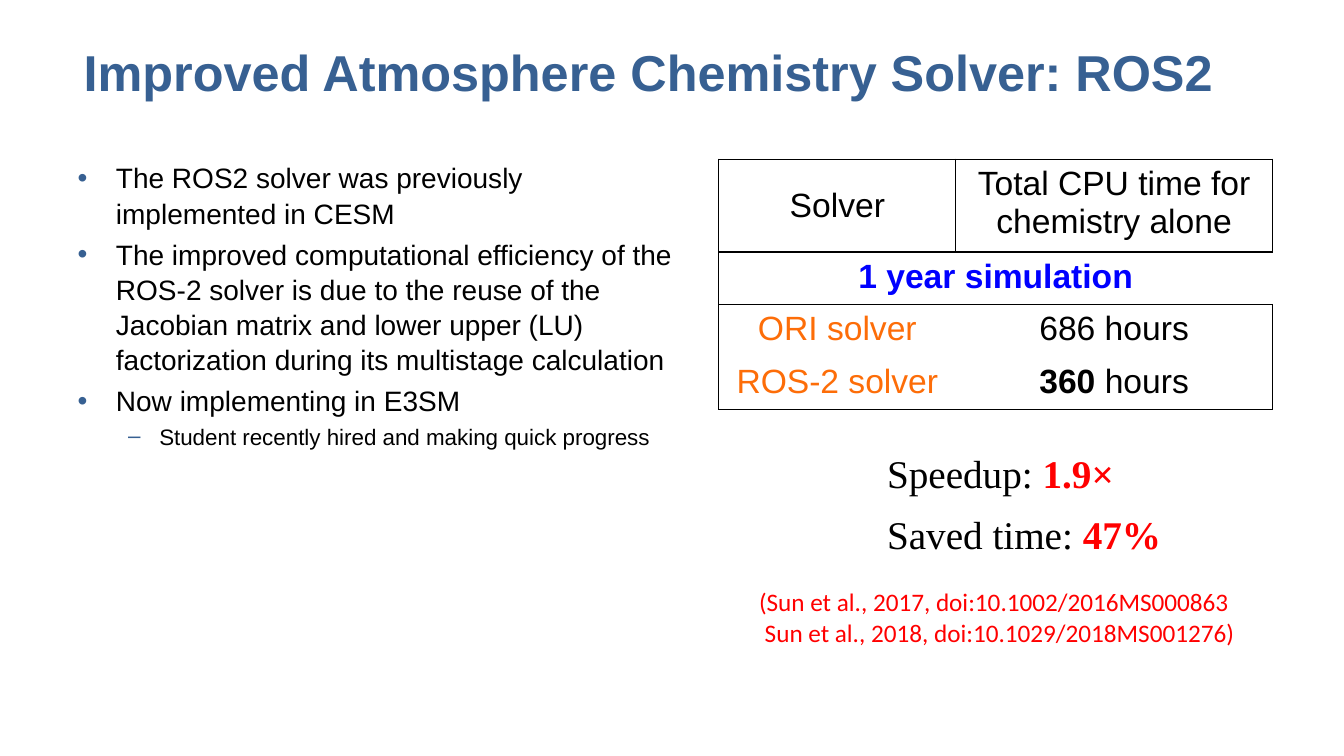
from lxml import etree
from pptx import Presentation
from pptx.dml.color import RGBColor
from pptx.enum.text import MSO_ANCHOR, PP_ALIGN
from pptx.oxml.ns import qn
from pptx.util import Inches, Pt

BOTTOM, MIDDLE, TOP = MSO_ANCHOR.BOTTOM, MSO_ANCHOR.MIDDLE, MSO_ANCHOR.TOP
CENTER = PP_ALIGN.CENTER
BLACK, RED, BLUE, ORANGE, STEEL = "000000", "FF0000", "0000FF", "FD6D08", "376092"
NO_STYLE = "{2D5ABB26-0587-4C30-8999-92F81FD0307C}"

BULLETS = [
    (0, "The ROS2 solver was previously implemented in CESM"),
    (0, "The improved computational efficiency of the ROS-2 solver is due to the "
        "reuse of the Jacobian matrix and lower upper (LU) factorization during "
        "its multistage calculation"),
    (0, "Now implementing in E3SM"),
    (1, "Student recently hired and making quick progress"),
]
LEVELS = [("•", 0.38, 0.38, 20, 4), ("–", 0.81, 0.31, 16, 3)]
CELLS = [
    (0, 0, [("Solver", BLACK, False)], "LRTB"),
    (0, 1, [("Total CPU time for chemistry alone", BLACK, False)], "LRTB"),
    (1, 0, [("1 year simulation", BLUE, True)], "LTB"),
    (1, 1, [], "RTB"),
    (2, 0, [("ORI solver", ORANGE, False)], "LT"),
    (2, 1, [("686 hours", BLACK, False)], "RT"),
    (3, 0, [("ROS-2 solver", ORANGE, False)], "LB"),
    (3, 1, [("360", BLACK, True), (" hours", BLACK, False)], "RB"),
]
RESULTS = [("Speedup: ", "1.9×"), ("Saved time: ", "47%")]
CITATIONS = ["(Sun et al., 2017, doi:10.1002/2016MS000863",
             " Sun et al., 2018, doi:10.1029/2018MS001276)"]


def rgb(value):
    return RGBColor.from_string(value)


def add_run(p, text, size, font, color, bold=False):
    r = p.add_run()
    r.text = text
    r.font.size = Pt(size)
    r.font.name = font
    r.font.bold = bold
    r.font.color.rgb = rgb(color)


def add_box(s, box, insets=(0, 0, 0, 0), anchor=TOP):
    tf = s.shapes.add_textbox(*map(Inches, box)).text_frame
    tf.word_wrap = True
    tf.vertical_anchor = anchor
    (tf.margin_left, tf.margin_top,
     tf.margin_right, tf.margin_bottom) = map(Inches, insets)
    return tf


def paragraph(tf, index):
    return tf.add_paragraph() if index else tf.paragraphs[0]


def set_bullet(p, char, left, hang):
    pPr = p._p.get_or_add_pPr()
    pPr.set("marL", str(Inches(left)))
    pPr.set("indent", str(-Inches(hang)))
    color = etree.SubElement(pPr, qn("a:buClr"))
    etree.SubElement(color, qn("a:srgbClr"), val=STEEL)
    etree.SubElement(pPr, qn("a:buFont"), typeface="Arial")
    etree.SubElement(pPr, qn("a:buChar"), char=char)


def set_borders(cell, sides):
    tcPr = cell._tc.get_or_add_tcPr()
    for i, side in enumerate("LRTB"):
        ln = etree.Element(qn("a:ln" + side), w=str(Pt(1)))
        if side in sides:
            fill = etree.SubElement(ln, qn("a:solidFill"))
            etree.SubElement(fill, qn("a:srgbClr"), val=BLACK)
        else:
            etree.SubElement(ln, qn("a:noFill"))
        tcPr.insert(i, ln)


def add_title(s, box):
    tf = add_box(s, box, (0, 0, 0, 0.57), BOTTOM)
    add_run(tf.paragraphs[0], "Improved Atmosphere Chemistry Solver: ROS2",
            36, "Arial", STEEL, True)


def add_bullets(s, box):
    tf = add_box(s, box)
    for i, (level, text) in enumerate(BULLETS):
        char, left, hang, size, before = LEVELS[level]
        p = paragraph(tf, i)
        p.level = level
        set_bullet(p, char, left, hang)
        p.line_spacing = 1.05
        if i:
            p.space_before = Pt(before)
        add_run(p, text, size, "Arial", BLACK)


def add_timing_table(s, box):
    table = s.shapes.add_table(4, 2, *map(Inches, box)).table
    table.first_row = table.horz_banding = False
    table._tbl.tblPr.find(qn("a:tableStyleId")).text = NO_STYLE
    for column, width in zip(table.columns, (2.35, 3.14)):
        column.width = Inches(width)
    for row, height in zip(table.rows, (0.86, 0.48, 0.48, 0.48)):
        row.height = Inches(height)
    table.cell(1, 0).merge(table.cell(1, 1))
    for row, col, runs, sides in CELLS:
        cell = table.cell(row, col)
        cell.fill.background()
        cell.margin_left = cell.margin_right = Inches(0.12)
        cell.margin_top = cell.margin_bottom = Inches(0.06)
        cell.vertical_anchor = MIDDLE if (row, col) == (0, 0) else TOP
        set_borders(cell, sides)
        p = cell.text_frame.paragraphs[0]
        p.alignment = CENTER
        for text, color, bold in runs:
            add_run(p, text, 24, "Arial", color, bold)


def add_results(s, box):
    tf = add_box(s, box, (0.1, 0.05, 0.1, 0.05))
    for i, (label, value) in enumerate(RESULTS):
        p = paragraph(tf, i)
        p.line_spacing = 1.3
        add_run(p, label, 28, "Times New Roman", BLACK)
        add_run(p, value, 28, "Times New Roman", RED, True)


def add_citations(s, box):
    tf = add_box(s, box, (0.1, 0.05, 0.1, 0.05))
    for i, text in enumerate(CITATIONS):
        add_run(paragraph(tf, i), text, 18, "Calibri", RED)


def main():
    prs = Presentation()
    prs.slide_width, prs.slide_height = Inches(13.33), Inches(7.5)
    s = prs.slides.add_slide(prs.slide_layouts[6])
    add_title(s, (0.83, 0.13, 11.5, 1.45))
    add_bullets(s, (0.77, 1.58, 5.9, 3.16))
    add_timing_table(s, (7.13, 1.58, 5.49, 2.3))
    add_results(s, (8.7, 4.27, 3.63, 1.45))
    add_citations(s, (7.43, 5.77, 5.11, 0.71))
    prs.save("out.pptx")


if __name__ == "__main__":
    main()
